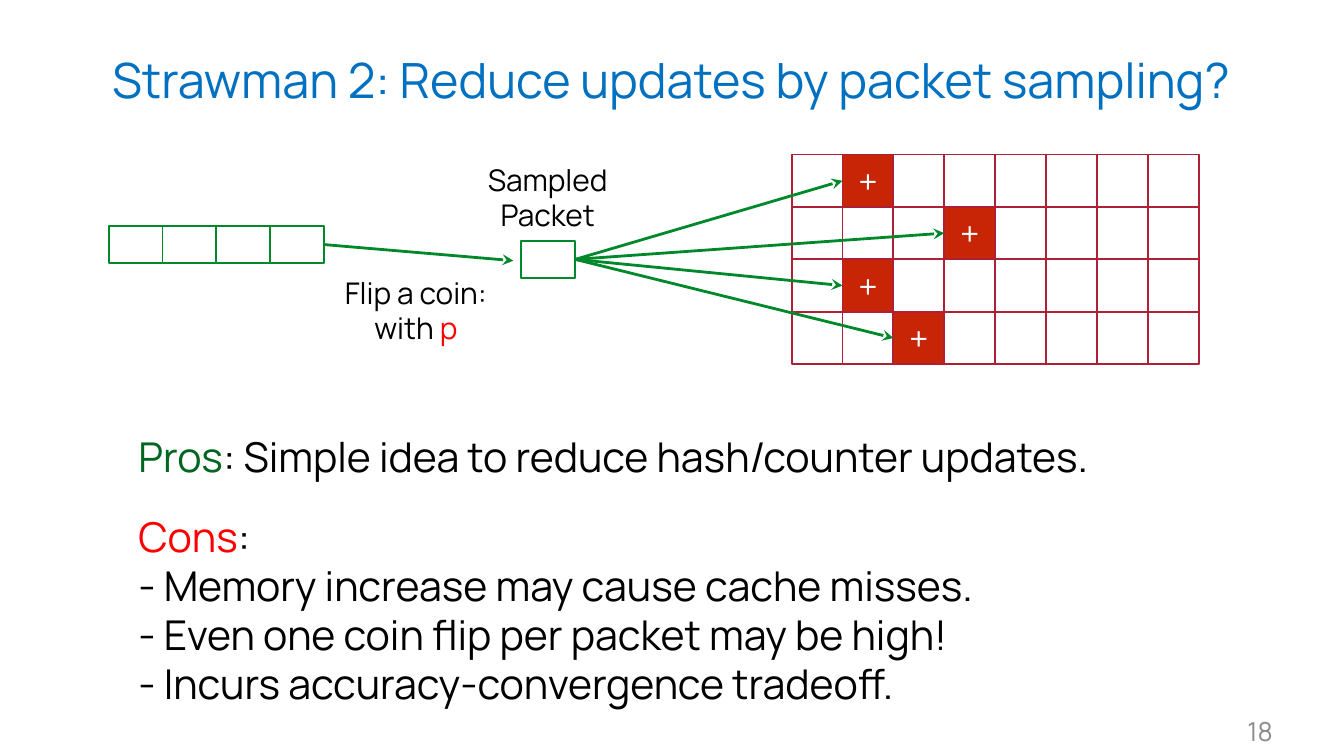
from lxml.etree import SubElement
from pptx import Presentation
from pptx.dml.color import RGBColor
from pptx.enum.shapes import MSO_CONNECTOR, MSO_SHAPE
from pptx.enum.text import MSO_ANCHOR as Anchor, PP_ALIGN as Align
from pptx.oxml.ns import qn
from pptx.util import Inches, Pt

COLORS = {
    "title": "0070C0", "number": "8C8C8C", "text": "000000", "white": "FFFFFF",
    "pros": "006620", "cons": "FF0000", "counter": "AE2035", "hit": "C82506",
    "packet": "00882B",
}
FONT = "Manrope"
BREAK = ("\n", "text")

TITLE = [[("Strawman 2: Reduce updates by packet sampling?", "title")]]
NUMBER = [[("18", "number")]]
SAMPLED = [[("Sampled Packet", "text")]]
COIN = [[("Flip a coin:", "text")], [("with ", "text"), ("p", "cons")]]
PROS = [[("Pros", "pros"), (": Simple idea to reduce hash/counter updates.", "text")]]
CONS = [
    [("Cons", "cons"), (": ", "text"), BREAK,
     ("- Memory increase may cause cache misses.", "text")],
    [("- Even one coin flip per packet may be high!", "text")],
    [("- Incurs accuracy-convergence tradeoff.", "text")],
]
PLUS = [[("+", "white")]]

ROWS, COLUMNS = 4, 8
GRID_LEFT, GRID_TOP = 5.89, 1.15
CELL_WIDTH, CELL_HEIGHT = 3.03 / COLUMNS, 0.39
HITS = [(0, 1), (1, 3), (2, 1), (3, 2)]

QUEUE_LENGTH = 4
QUEUE_LEFT, QUEUE_TOP = 0.81, 1.68
PACKET_WIDTH, PACKET_HEIGHT = 0.4, 0.28
SAMPLED_LEFT, SAMPLED_TOP = 3.88, 1.79


def rgb(name):
    return RGBColor.from_string(COLORS[name])


def write(frame, paragraphs, size=16, align=Align.LEFT, anchor=Anchor.MIDDLE,
          inset=(0.06, 0.06)):
    frame.word_wrap = True
    frame.vertical_anchor = anchor
    frame.margin_left = frame.margin_right = Inches(inset[0])
    frame.margin_top = frame.margin_bottom = Inches(inset[1])
    for index, runs in enumerate(paragraphs):
        paragraph = frame.add_paragraph() if index else frame.paragraphs[0]
        paragraph.alignment = align
        paragraph.font.name = FONT
        paragraph.font.size = Pt(size)
        for words, color in runs:
            if words == "\n":
                paragraph.add_line_break()
                continue
            run = paragraph.add_run()
            run.text = words
            run.font.name = FONT
            run.font.size = Pt(size)
            run.font.color.rgb = rgb(color)


def add_text(slide, box, paragraphs, **style):
    textbox = slide.shapes.add_textbox(*map(Inches, box))
    write(textbox.text_frame, paragraphs, **style)


def add_cell(slide, left, top, width, height, line, fill="white"):
    cell = slide.shapes.add_shape(
        MSO_SHAPE.RECTANGLE, *map(Inches, (left, top, width, height)))
    cell.shadow.inherit = False
    cell.fill.solid()
    cell.fill.fore_color.rgb = rgb(fill)
    cell.line.color.rgb = rgb(line)
    cell.line.width = Pt(1)
    return cell


def add_counter(slide, row, column, fill="white"):
    return add_cell(slide, GRID_LEFT + column * CELL_WIDTH, GRID_TOP + row * CELL_HEIGHT,
                    CELL_WIDTH, CELL_HEIGHT, "counter", fill)


def add_packet(slide, left, top):
    return add_cell(slide, left, top, PACKET_WIDTH, PACKET_HEIGHT, "packet")


def add_arrow(slide, source, end=(0, 0), target=None):
    arrow = slide.shapes.add_connector(
        MSO_CONNECTOR.STRAIGHT, 0, 0, *map(Inches, end))
    arrow.begin_connect(source, 3)
    if target is not None:
        arrow.end_connect(target, 1)
    arrow.line.color.rgb = rgb("packet")
    arrow.line.width = Pt(1.5)
    SubElement(arrow.line._get_or_add_ln(), qn("a:tailEnd"), type="stealth")
    SubElement(arrow._element.spPr, qn("a:effectLst"))


def main():
    deck = Presentation()
    deck.slide_width = Inches(10)
    deck.slide_height = deck.slide_width * 9 // 16
    slide = deck.slides.add_slide(deck.slide_layouts[6])

    add_text(slide, (0, 0.12, 10, 0.94), TITLE, size=26, align=Align.CENTER)
    add_text(slide, (9.11, 5.26, 0.46, 0.36), NUMBER, size=14, align=Align.RIGHT,
             inset=(0.1, 0.05))

    for row in range(ROWS):
        for column in range(COLUMNS):
            if (row, column) not in HITS:
                add_counter(slide, row, column)
    hits = [add_counter(slide, row, column, "hit") for row, column in HITS]
    for hit in hits:
        write(hit.text_frame, PLUS, size=18, align=Align.CENTER, inset=(0.1, 0.05))

    queue = [add_packet(slide, QUEUE_LEFT + i * PACKET_WIDTH, QUEUE_TOP)
             for i in range(QUEUE_LENGTH)]
    sampled = add_packet(slide, SAMPLED_LEFT, SAMPLED_TOP)
    add_arrow(slide, queue[-1], end=(3.82, 1.94))
    for hit in hits:
        add_arrow(slide, sampled, target=hit)

    add_text(slide, (3.19, 1.15, 1.77, 0.38), SAMPLED, align=Align.CENTER,
             anchor=Anchor.TOP, inset=(0.1, 0.05))
    add_text(slide, (2.43, 1.94, 1.33, 0.59), COIN, align=Align.CENTER,
             anchor=Anchor.TOP, inset=(0.1, 0.1))
    add_text(slide, (0.97, 3.15, 8.34, 0.48), PROS, size=22)
    add_text(slide, (0.97, 3.74, 8.96, 1.59), CONS, size=22)

    deck.save("out.pptx")


if __name__ == "__main__":
    main()
